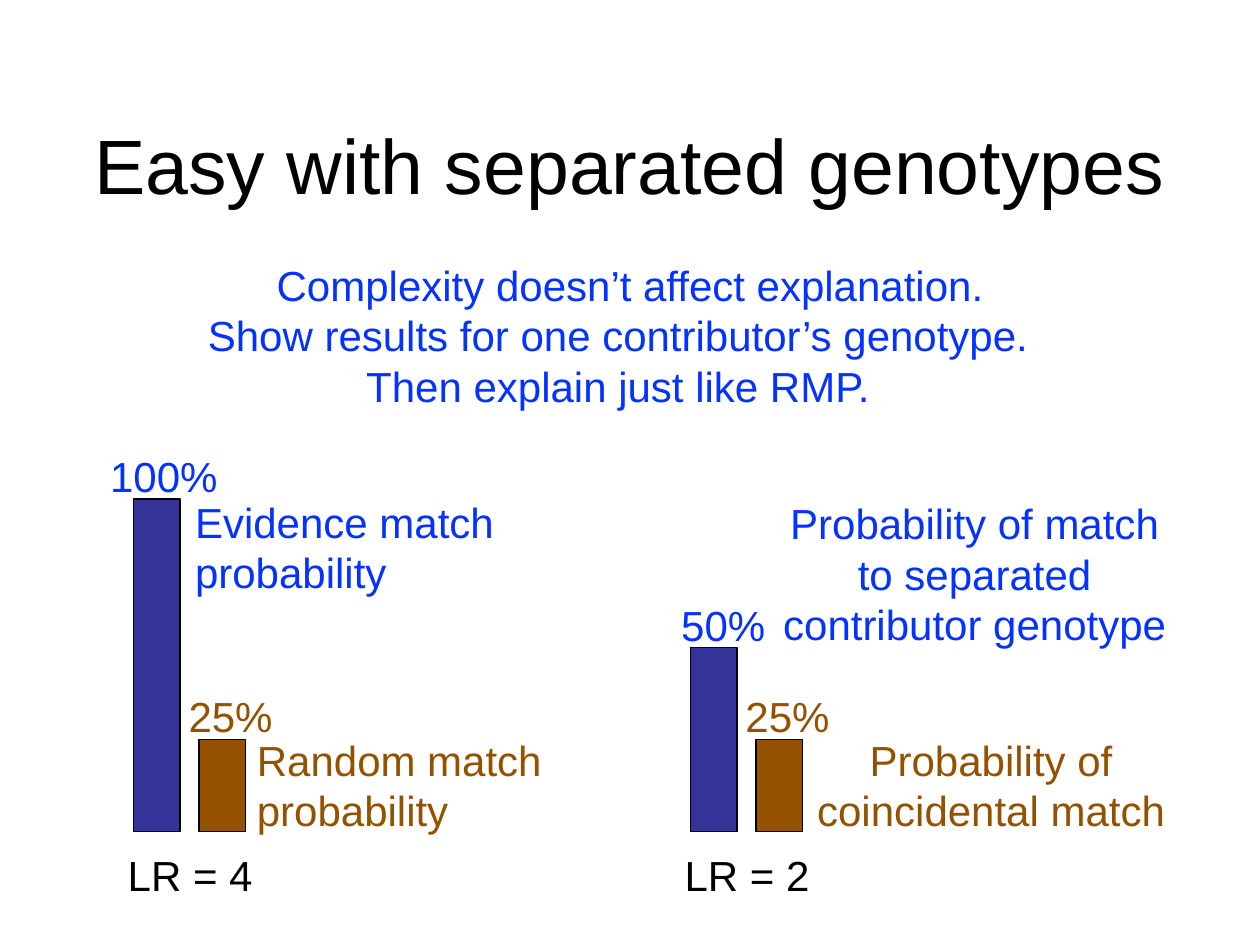
from typing import NamedTuple

from pptx import Presentation
from pptx.dml.color import RGBColor
from pptx.enum.shapes import MSO_SHAPE as Shape
from pptx.enum.text import MSO_ANCHOR as Anchor, PP_ALIGN as Align
from pptx.util import Inches, Pt

COLORS = {
    "black": "000000",
    "blue": "0432FF",
    "navy": "333399",
    "brown": "945200",
}
FONT = "Arial"
BASELINE = 6.6  # foot of all bars
BAR_W = 0.37


class Bar(NamedTuple):
    left: float
    height: float
    fill: str


class Label(NamedTuple):
    lines: list[str]
    left: float
    top: float
    width: float
    height: float
    color: str
    align: Align = Align.CENTER
    size: int = 24


class Group(NamedTuple):
    left: float  # left edge of the first bar
    evidence_height: float
    evidence_value: str
    value_left: float
    ratio: str


def rgb(name: str) -> RGBColor:
    return RGBColor.from_string(COLORS[name])


def draw_bar(slide, bar: Bar) -> None:
    sp = slide.shapes.add_shape(
        Shape.RECTANGLE, Inches(bar.left), Inches(BASELINE - bar.height),
        Inches(BAR_W), Inches(bar.height))
    sp.shadow.inherit = False
    sp.fill.solid()
    sp.fill.fore_color.rgb = rgb(bar.fill)
    sp.line.color.rgb = rgb("black")
    sp.line.width = Pt(0.75)


def draw_label(slide, label: Label):
    sp = slide.shapes.add_textbox(
        Inches(label.left), Inches(label.top),
        Inches(label.width), Inches(label.height))
    tf = sp.text_frame
    tf.word_wrap = False
    tf.text = "\n".join(label.lines)
    for p in tf.paragraphs:
        p.alignment = label.align
        p.font.name = FONT
        p.font.size = Pt(label.size)
        p.font.color.rgb = rgb(label.color)
    return tf


def draw_group(slide, group: Group) -> None:
    x = group.left
    top = BASELINE - group.evidence_height
    draw_bar(slide, Bar(x, group.evidence_height, "navy"))
    draw_bar(slide, Bar(x + 0.52, 0.73, "brown"))
    width = 1.06 if len(group.evidence_value) > 3 else 0.88
    draw_label(slide, Label([group.evidence_value], group.value_left, top - 0.43,
                            width, 0.5, "blue"))
    draw_label(slide, Label(["25%"], x + 0.33, 5.43, 0.88, 0.5, "brown"))
    draw_label(slide, Label([group.ratio], x - 0.15, 6.69, 1.2, 0.5, "black"))


GROUPS = [
    Group(1.06, 2.64, "100%", 0.77, "LR = 4"),
    Group(5.48, 1.46, "50%", 5.3, "LR = 2"),
]

# Names of the bars
BAR_NAMES = [
    Label(["Evidence match", "probability"], 1.45, 3.89, 2.6, 0.91, "blue", Align.LEFT),
    Label(["Random match", "probability"], 1.94, 5.78, 2.49, 0.91, "brown", Align.LEFT),
    Label(["Probability of match", "to separated", "contributor genotype"],
          6.1, 3.9, 3.27, 1.31, "blue"),
    Label(["Probability of", "coincidental match"], 6.37, 5.78, 2.99, 0.91, "brown"),
]


def main() -> None:
    prs = Presentation()
    prs.slide_width, prs.slide_height = Inches(10), Inches(7.5)
    slide = prs.slides.add_slide(prs.slide_layouts[6])

    # Title
    tf = draw_label(slide, Label(["Easy with separated genotypes"],
                                 0, 0.67, 10, 1.25, "black", size=44))
    tf.word_wrap = True
    tf.vertical_anchor = Anchor.MIDDLE

    # Summary, its middle line set slightly to the left
    tf = draw_label(slide, Label(
        ["Complexity doesn’t affect explanation.",
         "Show results for one contributor’s genotype.",
         "Then explain just like RMP."],
        1.52, 2.01, 6.96, 1.31, "blue"))
    tf.paragraphs[1]._p.get_or_add_pPr().set("marR", str(Inches(0.19)))

    # Bar pairs and their names
    for group in GROUPS:
        draw_group(slide, group)
    for label in BAR_NAMES:
        draw_label(slide, label)

    prs.save("out.pptx")


if __name__ == "__main__":
    main()
